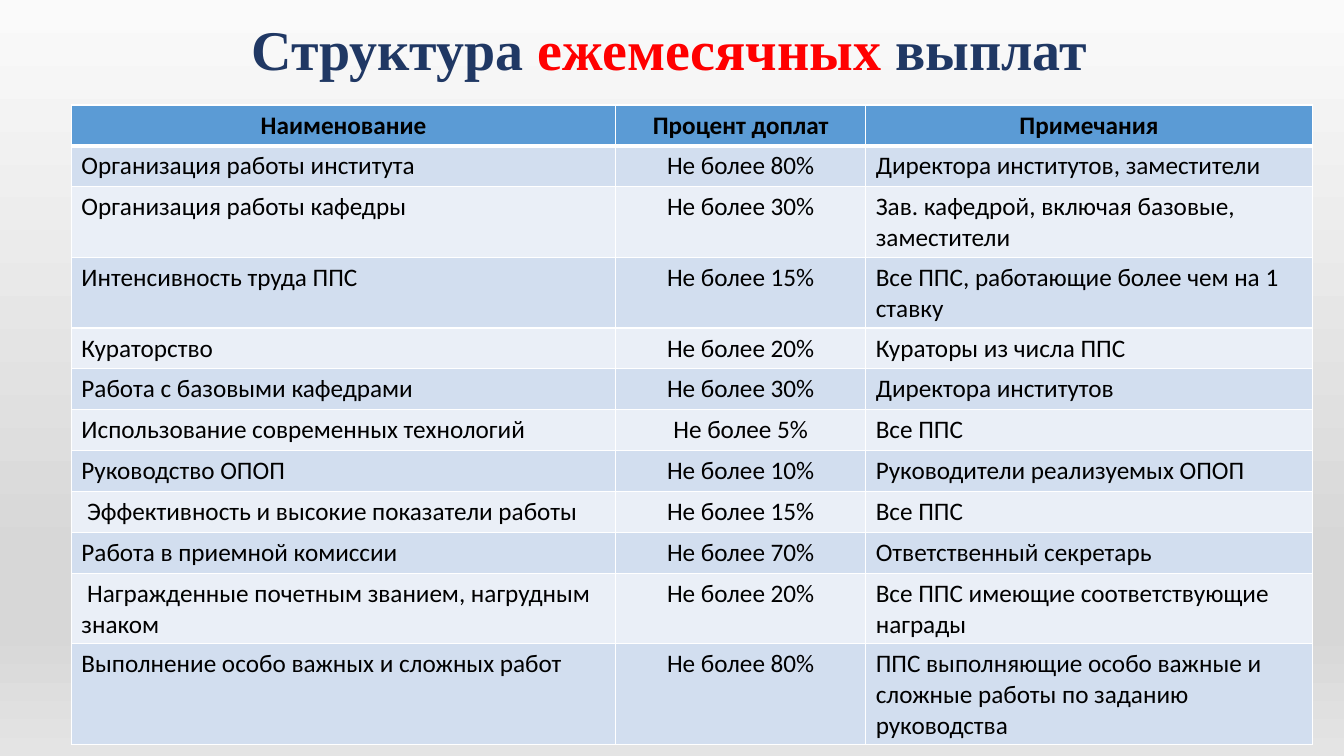
import pptx
import pptx.dml.color
import pptx.enum.text
import pptx.oxml
import pptx.oxml.ns
import pptx.util
import lxml.etree

Pt = pptx.util.Pt
qn = pptx.oxml.ns.qn
ALIGN = pptx.enum.text.PP_ALIGN
ANCHOR = pptx.enum.text.MSO_ANCHOR

COLORS = {
    "navy": "203864",
    "red": "FF0000",
    "black": "000000",
    "white": "FFFFFF",
    "header": "5B9BD5",
    "odd": "D2DEEF",
    "even": "EAEFF7",
}
BACKGROUND_STOPS = [(0, "FAFAFA"), (74, "D7D7D7"), (83, "D7D7D7"), (100, "E4E4E4")]
COLUMN_WIDTHS = [388.8, 178.6, 319]
ROW_HEIGHT = 29.2
ROWS = [
    ("Наименование", "Процент доплат", "Примечания"),
    ("Организация работы института", "Не более 80%", "Директора институтов, заместители"),
    ("Организация работы кафедры", "Не более 30%", "Зав. кафедрой, включая базовые, заместители"),
    ("Интенсивность труда ППС", "Не более 15%", "Все ППС, работающие более чем на 1 ставку"),
    ("Кураторство", "Не более 20%", "Кураторы из числа ППС"),
    ("Работа с базовыми кафедрами", "Не более 30%", "Директора институтов"),
    ("Использование современных технологий", "Не более 5%", "Все ППС"),
    ("Руководство ОПОП", "Не более 10%", "Руководители реализуемых ОПОП"),
    (" Эффективность и высокие показатели работы", "Не более 15%", "Все ППС"),
    ("Работа в приемной комиссии", "Не более 70%", "Ответственный секретарь"),
    (" Награжденные почетным званием, нагрудным знаком", "Не более 20%",
     "Все ППС имеющие соответствующие награды"),
    ("Выполнение особо важных и сложных работ", "Не более 80%",
     "ППС выполняющие особо важные и сложные работы по заданию руководства"),
]


def add_span(para, text, size=18, font="Calibri", color="black", bold=False, align=ALIGN.LEFT):
    para.alignment = align
    span = para.add_run()
    span.text = text
    span.font.size = Pt(size)
    span.font.name = font
    span.font.bold = bold
    span.font.color.rgb = pptx.dml.color.RGBColor.from_string(COLORS[color])


def add_border(cell, side, width):
    line = lxml.etree.SubElement(cell._tc.get_or_add_tcPr(), qn(f"a:ln{side}"), w=str(Pt(width)))
    fill = lxml.etree.SubElement(line, qn("a:solidFill"))
    lxml.etree.SubElement(fill, qn("a:srgbClr"), val=COLORS["white"])


deck = pptx.Presentation()
deck.slide_width = Pt(960)
deck.slide_height = Pt(540)
page = deck.slides.add_slide(deck.slide_layouts[6])

background = page.background.fill
background.gradient()
background.gradient_angle = 270
stops = page._element.find(".//" + qn("a:gsLst"))
for stop in list(stops):
    stops.remove(stop)
for position, color in BACKGROUND_STOPS:
    stop = lxml.etree.SubElement(stops, qn("a:gs"), pos=str(position * 1000))
    lxml.etree.SubElement(stop, qn("a:srgbClr"), val=color)

title_box = page.shapes.add_textbox(Pt(154), Pt(0), Pt(648), Pt(75))
title_box.text_frame.word_wrap = True
title_box.text_frame.vertical_anchor = ANCHOR.MIDDLE
title = title_box.text_frame.paragraphs[0]
title.line_spacing = 0.9
for text, color in [("Структура ", "navy"), ("ежемесячных", "red"), (" выплат", "navy")]:
    add_span(title, text, size=40, font="Times New Roman", color=color, bold=True, align=ALIGN.CENTER)

table = page.shapes.add_table(
    len(ROWS), len(COLUMN_WIDTHS), Pt(51), Pt(75),
    Pt(sum(COLUMN_WIDTHS)), Pt(ROW_HEIGHT * len(ROWS)),
).table
for column, width in zip(table.columns, COLUMN_WIDTHS):
    column.width = Pt(width)

for row_index, texts in enumerate(ROWS):
    table.rows[row_index].height = Pt(ROW_HEIGHT)
    is_header = row_index == 0
    fill_name = "header" if is_header else "odd" if row_index % 2 else "even"
    for column_index, text in enumerate(texts):
        cell = table.cell(row_index, column_index)
        for side in "LRTB":
            under_header = (row_index, side) in [(0, "B"), (1, "T")]
            add_border(cell, side, 3 if under_header else 1)
        cell.fill.solid()
        cell.fill.fore_color.rgb = pptx.dml.color.RGBColor.from_string(COLORS[fill_name])
        centered = is_header or column_index == 1
        add_span(cell.text_frame.paragraphs[0], text, bold=is_header,
                 align=ALIGN.CENTER if centered else ALIGN.LEFT)

deck.save("out.pptx")
